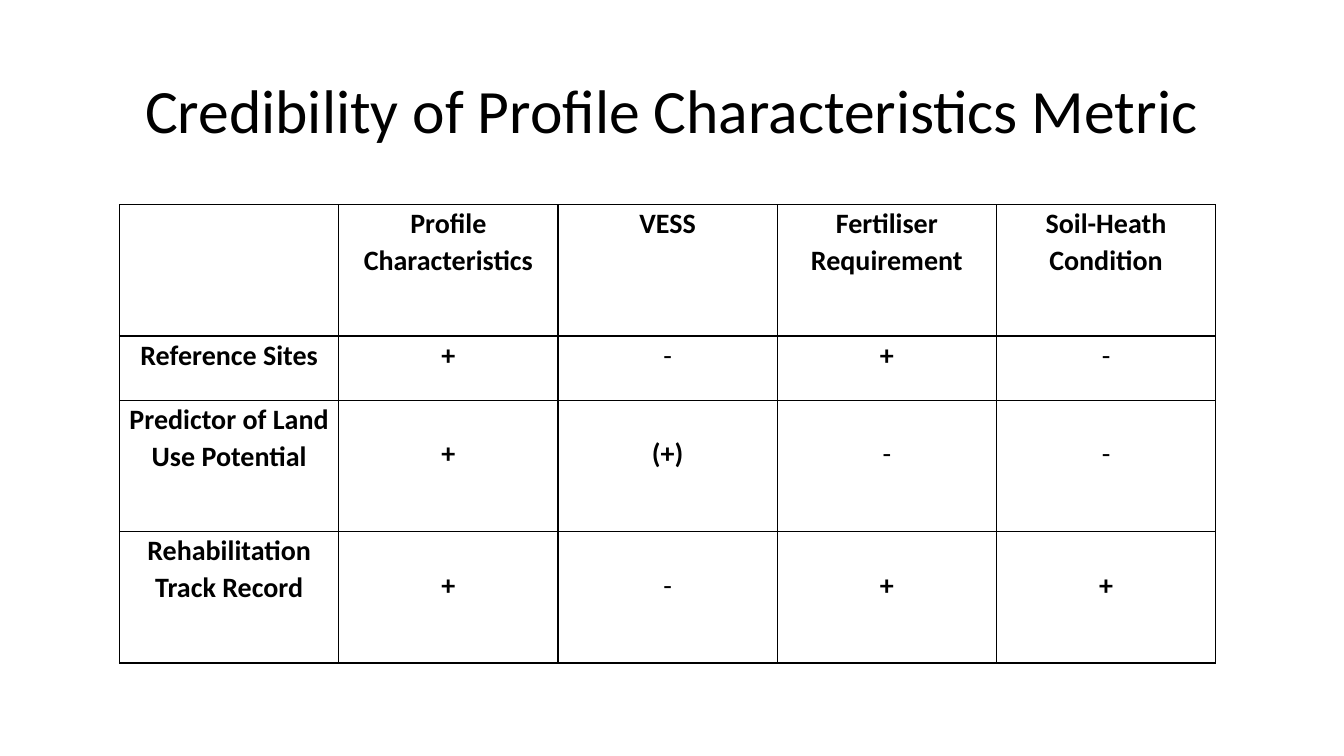
from lxml.etree import SubElement
from pptx import Presentation
from pptx.dml.color import RGBColor
from pptx.enum.text import MSO_ANCHOR as Anchor, PP_ALIGN as Align
from pptx.oxml.ns import qn
from pptx.util import Pt

BLACK = "000000"
COLUMN_WIDTH = 156.6
ROW_HEIGHTS = [93.8, 46, 93.8, 93.8]
MARK_DROP = 24.5
RATINGS = [
    ["", "Profile Characteristics", "VESS", "Fertiliser Requirement", "Soil-Heath Condition"],
    ["Reference Sites", "+", "-", "+", "-"],
    ["Predictor of Land Use Potential", "+", "(+)", "-", "-"],
    ["Rehabilitation Track Record", "+", "-", "+", "+"],
]


def write(frame, text, size=20, bold=False, spacing=1.07, color=BLACK):
    frame.word_wrap = True
    para = frame.paragraphs[0]
    para.alignment = Align.CENTER
    para.line_spacing = spacing
    span = para.add_run()
    span.text = text
    span.font.name = "Calibri"
    span.font.size = Pt(size)
    span.font.bold = bold
    span.font.color.rgb = RGBColor.from_string(color)


def outline(cell, color=BLACK, width=1):
    properties = cell._tc.get_or_add_tcPr()
    for side in ("a:lnL", "a:lnR", "a:lnT", "a:lnB"):
        line = SubElement(properties, qn(side), w=str(Pt(width)))
        fill = SubElement(line, qn("a:solidFill"))
        SubElement(fill, qn("a:srgbClr"), val=color)


deck = Presentation()
deck.slide_width, deck.slide_height = Pt(960), Pt(540)
page = deck.slides.add_slide(deck.slide_layouts[6])

title = page.shapes.add_textbox(Pt(66), Pt(28.8), Pt(828), Pt(104.4)).text_frame
title.vertical_anchor = Anchor.MIDDLE
write(title, "Credibility of Profile Characteristics Metric", size=44, spacing=0.9)

row_count, column_count = len(RATINGS), len(RATINGS[0])
table = page.shapes.add_table(
    row_count, column_count, Pt(85.4), Pt(146.2),
    Pt(COLUMN_WIDTH * column_count), Pt(sum(ROW_HEIGHTS))).table
table.first_row = False
table.horz_banding = False
for column in table.columns:
    column.width = Pt(COLUMN_WIDTH)

for row_index, (height, ratings) in enumerate(zip(ROW_HEIGHTS, RATINGS)):
    table.rows[row_index].height = Pt(height)
    for column_index, text in enumerate(ratings):
        cell = table.cell(row_index, column_index)
        # Marks beside two-line labels sit one line lower
        dropped = row_index >= 2 and column_index > 0
        cell.margin_left = cell.margin_right = Pt(5.4)
        cell.margin_top = Pt(MARK_DROP if dropped else 0)
        cell.margin_bottom = Pt(0)
        outline(cell)
        cell.fill.background()
        if text:
            write(cell.text_frame, text, bold=text != "-")

deck.save("out.pptx")
